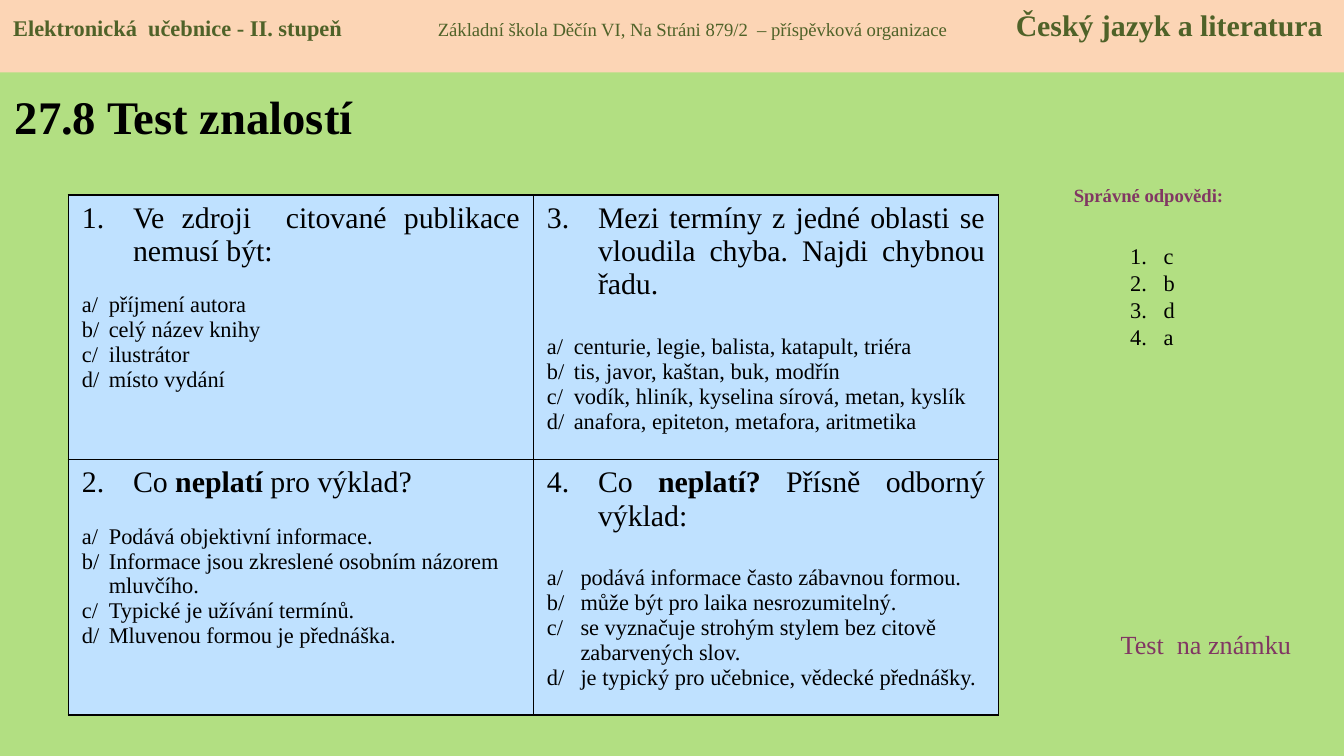
from dataclasses import dataclass

from lxml import etree
from pptx import Presentation
from pptx.dml.color import RGBColor
from pptx.enum import shapes, text
from pptx.oxml import ns
from pptx.util import Inches, Pt

FONT = "Times New Roman"
COLORS = {
    "background": "B2DF82",
    "header": "FCD5B5",
    "header_text": "4F6228",
    "cell": "BFE1FF",
    "accent": "813763",
    "black": "000000",
}


@dataclass(frozen=True)
class Run:
    text: str
    bold: bool = False
    size: float = 16


@dataclass(frozen=True)
class Question:
    number: int
    runs: tuple[Run, ...]
    answers: tuple[str, ...]
    gap: float  # points between the question and its answers
    hang: float = 0.2  # inches from the answer's letter to its text


QUESTION_GRID = (
    (
        Question(1, (Run("Ve zdroji  citované publikace nemusí být:"),),
                 ("příjmení autora", "celý název knihy", "ilustrátor", "místo vydání"), 13.3),
        Question(3, (Run("Mezi termíny z jedné oblasti se vloudila chyba. Najdi chybnou řadu."),),
                 ("centurie, legie, balista, katapult, triéra",
                  "tis, javor, kaštan, buk, modřín",
                  "vodík, hliník, kyselina sírová, metan, kyslík",
                  "anafora, epiteton, metafora, aritmetika"), 17.9),
    ),
    (
        Question(2, (Run("Co "), Run("neplatí ", True), Run("pro výklad?")),
                 ("Podává objektivní informace.",
                  "Informace jsou zkreslené osobním názorem mluvčího.",
                  "Typické je užívání termínů.",
                  "Mluvenou formou je přednáška."), 13.3),
        Question(4, (Run("Co "), Run("neplatí? ", True), Run("Přísně odborný výklad:")),
                 ("podává informace často zábavnou formou.",
                  "může být pro laika nesrozumitelný.",
                  "se vyznačuje strohým stylem bez citově zabarvených slov.",
                  "je typický pro učebnice, vědecké přednášky."), 17.9, 0.25),
    ),
)
COLUMN_WIDTH = 3.46
ROW_HEIGHTS = (1.97, 1.9)
CORRECT_ANSWERS = "cbda"


def rgb(name: str) -> RGBColor:
    return RGBColor.from_string(COLORS[name])


def add_run(paragraph, run: Run, color: str = "black") -> None:
    new_run = paragraph.add_run()
    new_run.text = run.text
    font = new_run.font
    font.name, font.size, font.bold = FONT, Pt(run.size), run.bold
    font.color.rgb = rgb(color)


def next_paragraph(frame):
    """Return the first paragraph while it is empty, otherwise a new one."""
    first = frame.paragraphs[0]
    return frame.add_paragraph() if first.runs else first


def set_hanging(paragraph, indent: float) -> None:
    properties = paragraph._p.get_or_add_pPr()
    properties.set("marL", str(Inches(indent)))
    properties.set("indent", str(-Inches(indent)))


def set_number(paragraph, start: int = 1) -> None:
    properties = paragraph._p.get_or_add_pPr()
    etree.SubElement(properties, ns.qn("a:buFont"), typeface=FONT)
    numbering = etree.SubElement(properties, ns.qn("a:buAutoNum"), type="arabicPeriod")
    if start > 1:
        numbering.set("startAt", str(start))


def set_tabs(paragraph, positions: tuple[float, ...]) -> None:
    tabs = etree.SubElement(paragraph._p.get_or_add_pPr(), ns.qn("a:tabLst"))
    for position in positions:
        etree.SubElement(tabs, ns.qn("a:tab"), pos=str(Inches(position)), algn="l")


def set_borders(cell) -> None:
    properties = cell._tc.get_or_add_tcPr()
    for side in ("lnL", "lnR", "lnT", "lnB"):
        line = etree.SubElement(properties, ns.qn(f"a:{side}"), w=str(Pt(1)))
        fill = etree.SubElement(line, ns.qn("a:solidFill"))
        etree.SubElement(fill, ns.qn("a:srgbClr"), val=COLORS["black"])


def add_text_box(slide, left: float, top: float, width: float, height: float):
    box = slide.shapes.add_textbox(Inches(left), Inches(top), Inches(width), Inches(height))
    box.text_frame.word_wrap = True
    return box.text_frame


def fill_question_cell(cell, question: Question) -> None:
    set_borders(cell)
    cell.fill.solid()
    cell.fill.fore_color.rgb = rgb("cell")
    frame = cell.text_frame
    heading = frame.paragraphs[0]
    heading.alignment = text.PP_ALIGN.JUSTIFY
    set_hanging(heading, 0.38)
    set_number(heading, question.number)
    for run in question.runs:
        add_run(heading, run)
    for index, (letter, answer) in enumerate(zip("abcd", question.answers)):
        paragraph = frame.add_paragraph()
        paragraph.alignment = text.PP_ALIGN.LEFT
        if index == 0:
            paragraph.space_before = Pt(question.gap)
        set_hanging(paragraph, question.hang)
        add_run(paragraph, Run(f"{letter}/\t{answer}", size=12))


def add_title(slide) -> None:
    title = slide.shapes.title
    title.left, title.top = Inches(0.01), Inches(0.54)
    title.width, title.height = Inches(3.19), Inches(0.65)
    frame = title.text_frame
    frame.auto_size = text.MSO_AUTO_SIZE.NONE
    frame.vertical_anchor = text.MSO_ANCHOR.MIDDLE
    frame.paragraphs[0].alignment = text.PP_ALIGN.LEFT
    add_run(frame.paragraphs[0], Run("27.8 Test znalostí", True, 25))


def add_question_table(slide) -> None:
    table = slide.shapes.add_table(
        2, 2, Inches(0.51), Inches(1.45), Inches(2 * COLUMN_WIDTH), Inches(sum(ROW_HEIGHTS))
    ).table
    for column in table.columns:
        column.width = Inches(COLUMN_WIDTH)
    for row, height, questions in zip(table.rows, ROW_HEIGHTS, QUESTION_GRID):
        row.height = Inches(height)
        for cell, question in zip(row.cells, questions):
            fill_question_cell(cell, question)


def add_answer_key(slide) -> None:
    heading = add_text_box(slide, 7.76, 1.32, 1.57, 0.27).paragraphs[0]
    heading.alignment = text.PP_ALIGN.CENTER
    add_run(heading, Run("Správné odpovědi:", True, 10), "accent")

    frame = add_text_box(slide, 8.31, 1.55, 0.55, 1.31)
    frame.margin_top = Inches(0.25)
    for answer in CORRECT_ANSWERS:
        paragraph = next_paragraph(frame)
        paragraph.line_spacing = Pt(14.5)
        set_hanging(paragraph, 0.25)
        set_number(paragraph)
        add_run(paragraph, Run(answer, size=12))


def add_header(slide, width: int) -> None:
    header = slide.shapes.add_shape(
        shapes.MSO_SHAPE.RECTANGLE, 0, 0, width, Inches(0.54))
    header.shadow.inherit = False
    header.fill.solid()
    header.fill.fore_color.rgb = rgb("header")
    header.line.fill.background()
    header.text_frame.vertical_anchor = text.MSO_ANCHOR.TOP
    paragraph = header.text_frame.paragraphs[0]
    paragraph.alignment = text.PP_ALIGN.LEFT
    set_tabs(paragraph, (3.16, 7.46))
    for run in (
        Run("Elektronická  učebnice - II. stupeň\t", True, 12),
        Run("Základní škola Děčín VI, Na Stráni 879/2  – příspěvková organizace\t", size=10),
        Run("Český jazyk a literatura", True, 16),
    ):
        add_run(paragraph, run, "header_text")


def main() -> None:
    presentation = Presentation()
    presentation.slide_width = Inches(10)
    presentation.slide_height = presentation.slide_width * 9 // 16
    slide = presentation.slides.add_slide(presentation.slide_layouts[5])
    slide.background.fill.solid()
    slide.background.fill.fore_color.rgb = rgb("background")
    add_title(slide)
    add_question_table(slide)
    add_answer_key(slide)
    graded_test = add_text_box(slide, 8.24, 4.63, 1.57, 0.34)
    add_run(graded_test.paragraphs[0], Run("Test  na známku", size=14), "accent")
    add_header(slide, presentation.slide_width)
    presentation.save("out.pptx")


if __name__ == "__main__":
    main()
